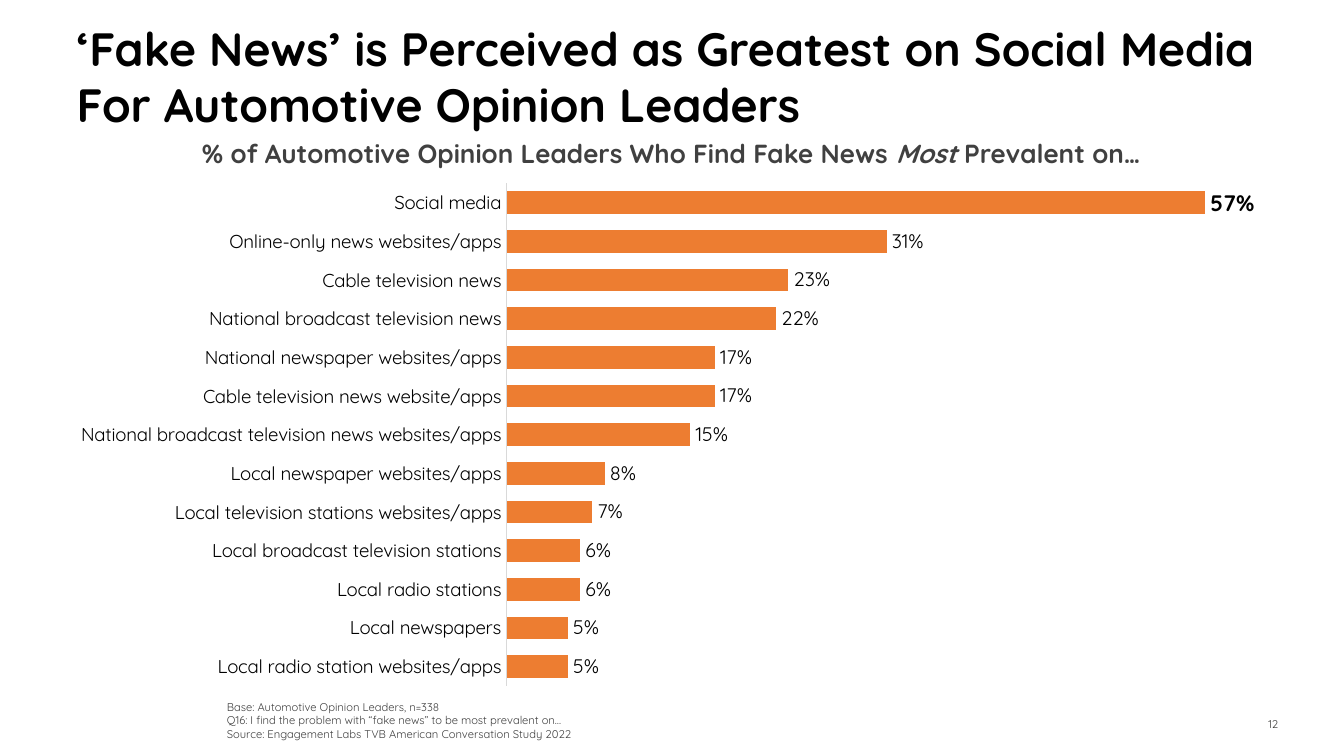
from lxml import etree
from pptx import Presentation
from pptx import util as u
from pptx.chart import data
from pptx.dml.color import RGBColor
from pptx.enum import chart as ch, text
from pptx.oxml import ns, parse_xml

FONT = "Quicksand"
BLACK = RGBColor(0x00, 0x00, 0x00)
GREY = RGBColor(0x40, 0x40, 0x40)
DARK = RGBColor(0x3C, 0x3C, 0x3A)
RULE = RGBColor(0xD9, 0xD9, 0xD9)
ORANGE = RGBColor(0xED, 0x7D, 0x31)
PERCENT = "#,##0%"
ALIGN = text.PP_ALIGN
ANCHOR = text.MSO_ANCHOR


def style(font, size, color, bold=False, italic=False):
    font.name = FONT
    font.size = u.Pt(size)
    font.color.rgb = color
    font.bold = bold
    font.italic = italic


def fill_box(box, place, lines, size, color, align, anchor, bold=False, wrap=True):
    box.left, box.top, box.width, box.height = [u.Inches(v) for v in place]
    frame = box.text_frame
    frame.word_wrap = wrap
    frame.auto_size = text.MSO_AUTO_SIZE.NONE
    frame.vertical_anchor = anchor
    for number, line in enumerate(lines):
        para = frame.paragraphs[0] if number == 0 else frame.add_paragraph()
        para.alignment = align
        for words, italic in line:
            span = para.add_run()
            span.text = words
            style(span.font, size, color, bold, italic)


deck = Presentation()
deck.slide_width = u.Inches(10)
deck.slide_height = u.Inches(10 * 9 / 16)
page = deck.slides.add_slide(deck.slide_layouts[5])

title = page.shapes.title
title.text_frame.margin_top = 0
fill_box(title, (0.47, 0.15, 9.42, 0.57),
         [[("‘Fake News’ is Perceived as Greatest on Social Media For Automotive Opinion Leaders", False)]],
         25, BLACK, ALIGN.LEFT, ANCHOR.TOP, bold=True)

shares = [
    ("Social media", 0.57),
    ("Online-only news websites/apps", 0.31),
    ("Cable television news", 0.23),
    ("National broadcast television news", 0.22),
    ("National newspaper websites/apps", 0.17),
    ("Cable television news website/apps", 0.17),
    ("National broadcast television news websites/apps", 0.15),
    ("Local newspaper websites/apps", 0.08),
    ("Local television stations websites/apps", 0.07),
    ("Local broadcast television stations", 0.06),
    ("Local radio stations", 0.06),
    ("Local newspapers", 0.05),
    ("Local radio station websites/apps", 0.05),
]
chart_data = data.CategoryChartData(number_format=PERCENT)
chart_data.categories = [source for source, share in shares]
chart_data.add_series("Series 1", [share for source, share in shares])
chart = page.shapes.add_chart(
    ch.XL_CHART_TYPE.BAR_CLUSTERED, u.Inches(0.51), u.Inches(1.22),
    u.Inches(9.42), u.Inches(4.03), chart_data).chart
chart.has_legend = False
chart.has_title = False
style(chart.font, 10, BLACK)

sources = chart.category_axis
sources.reverse_order = True
sources.major_tick_mark = ch.XL_TICK_MARK.NONE
sources.format.line.color.rgb = RULE
sources.format.line.width = u.Pt(0.75)
style(sources.tick_labels.font, 10, BLACK)
scale = chart.value_axis
scale.minimum_scale = 0
scale.maximum_scale = 0.6
scale.has_major_gridlines = False
scale.visible = False
scale.tick_labels.number_format = PERCENT
scale.tick_labels.number_format_is_linked = False

plot = chart.plots[0]
plot.gap_width = 70
plot.vary_by_categories = False
bars = plot.series[0]
bars.format.fill.solid()
bars.format.fill.fore_color.rgb = ORANGE
labels = bars.data_labels
labels.show_value = True
labels.number_format = PERCENT
labels.number_format_is_linked = False
labels.position = ch.XL_LABEL_POSITION.OUTSIDE_END
style(labels.font, 10.5, BLACK)
top_label = bars.points[0].data_label
style(top_label.font, 12, BLACK, bold=True)
top_label.position = ch.XL_LABEL_POSITION.OUTSIDE_END
point_xml = bars._element.find(".//" + ns.qn("c:dLbl"))
number_xml = etree.Element(ns.qn("c:numFmt"), formatCode=PERCENT, sourceLinked="0")
point_xml.find(ns.qn("c:idx")).addnext(number_xml)

plot_area = chart._chartSpace.chart.plotArea
for old in plot_area.findall(ns.qn("c:layout")):
    plot_area.remove(old)
plot_area.insert(0, parse_xml(
    f'<c:layout {ns.nsdecls("c")}><c:manualLayout><c:layoutTarget val="inner"/>'
    '<c:xMode val="edge"/><c:yMode val="edge"/><c:x val="0.346"/><c:y val="0.036"/>'
    '<c:w val="0.581"/><c:h val="0.928"/></c:manualLayout></c:layout>'))

notes = [
    "Base: Automotive Opinion Leaders, n=338",
    "Q16: I find the problem with “fake news” to be most prevalent on…",
    "Source: Engagement Labs TVB American Conversation Study 2022",
]
subtitle = [("% of Automotive Opinion Leaders Who Find Fake News ", False),
            ("Most", True), (" Prevalent on…", False)]
boxes = [
    ((1.59, 5.16, 7.53, 0.4), [[(note, False)] for note in notes],
     6, GREY, ALIGN.LEFT, ANCHOR.BOTTOM, False, True),
    ((1.31, 0.97, 7.37, 0.34), [subtitle], 14, GREY, ALIGN.CENTER, ANCHOR.TOP, True, False),
    ((9.02, 5.24, 0.59, 0.3), [[("12", False)]],
     6, DARK, ALIGN.RIGHT, ANCHOR.MIDDLE, False, True),
]
for place, *look in boxes:
    fill_box(page.shapes.add_textbox(0, 0, 0, 0), place, *look)

deck.save("out.pptx")
